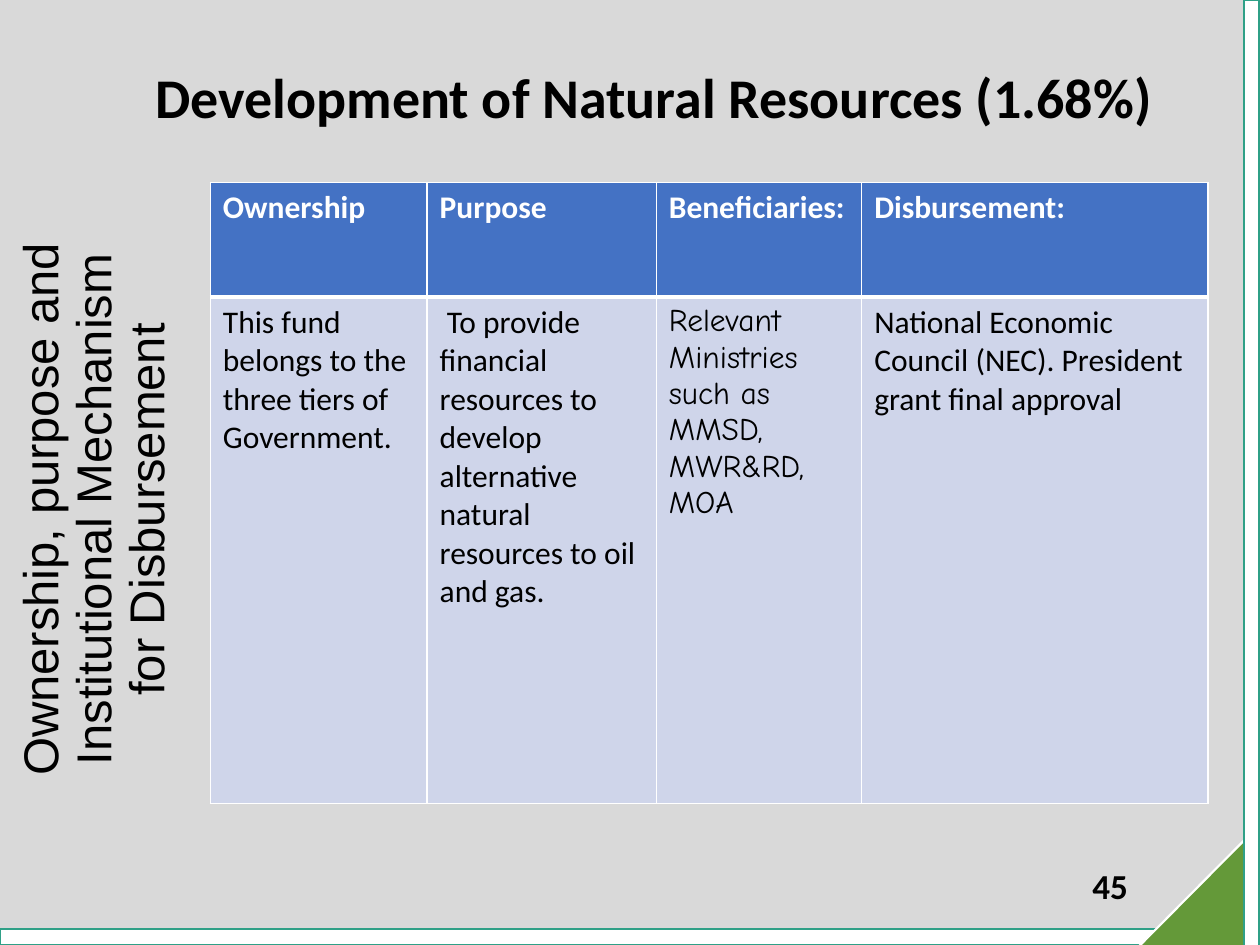
"""Build the slide on the development of natural resources fund."""
from lxml import etree
from pptx import Presentation
from pptx import util as u
from pptx.dml.color import RGBColor
from pptx.enum import shapes, text
from pptx.oxml.ns import qn

COLORS = {"back": "D9D9D9", "white": "FFFFFF", "black": "000000", "teal": "2FA087",
          "green": "649939", "header": "4472C4", "body": "CFD5EA"}


class Deck:
    """Holds the style and the current slide."""

    def __init__(self):
        self.prs = Presentation()
        self.prs.slide_width, self.prs.slide_height = u.Cm(25.4), u.Cm(19.05)
        self.s = self.prs.slides.add_slide(self.prs.slide_layouts[5])
        self.paint(self.s.background.fill, "back")

    def paint(self, fill, color):
        fill.solid()
        fill.fore_color.rgb = RGBColor.from_string(COLORS[color])

    def set_text(self, tf, words, size, color="black", bold=False, font="Calibri", align=None):
        tf.word_wrap = True
        p = tf.paragraphs[0]
        p.text, p.alignment = words, align
        p.font.size, p.font.bold, p.font.name = u.Pt(size), bold, font
        p.font.color.rgb = RGBColor.from_string(COLORS[color])
        return p

    def shape(self, kind, box, fill, line, rotation=0):
        sp = self.s.shapes.add_shape(kind, *map(u.Cm, box))
        sp.rotation = rotation
        sp.shadow.inherit = False
        self.paint(sp.fill, fill)
        self.paint(sp.line.fill, line)
        sp.line.width = u.Pt(1.25)

    def title(self, words, box):
        sp = self.s.shapes.title
        sp.left, sp.top, sp.width, sp.height = map(u.Cm, box)
        sp.text_frame.vertical_anchor = text.MSO_ANCHOR.MIDDLE
        self.set_text(sp.text_frame, words, 32, bold=True, align=text.PP_ALIGN.CENTER)

    def number(self, words, box):
        tf = self.s.shapes.add_textbox(*map(u.Cm, box)).text_frame
        tf.vertical_anchor = text.MSO_ANCHOR.MIDDLE
        self.set_text(tf, words, 20, bold=True, align=text.PP_ALIGN.RIGHT)

    def side_heading(self, words, box):
        tf = self.s.shapes.add_textbox(*map(u.Cm, box)).text_frame
        p = self.set_text(tf, words, 28, font="Arial", align=text.PP_ALIGN.CENTER)
        p.line_spacing = 0.9
        tf._txBody.bodyPr.set("vert", "vert270")

    def border(self, cell, side, points):
        ln = etree.SubElement(cell._tc.get_or_add_tcPr(), qn(f"a:ln{side}"), w=str(u.Pt(points)))
        fill = etree.SubElement(ln, qn("a:solidFill"))
        etree.SubElement(fill, qn("a:srgbClr"), val=COLORS["white"])

    def table(self, rows, box, widths, heights):
        tbl = self.s.shapes.add_table(len(rows), len(widths), *map(u.Cm, box)).table
        for col, width in zip(tbl.columns, widths):
            col.width = u.Cm(width)
        for i, (row, height) in enumerate(zip(rows, heights)):
            tbl.rows[i].height = u.Cm(height)
            head = i == 0
            for j, (words, font) in enumerate(row):
                cell = tbl.cell(i, j)
                for side, points in zip("LRTB", (1, 1, 1, 3) if head else (1, 1, 3, 1)):
                    self.border(cell, side, points)
                self.paint(cell.fill, "header" if head else "body")
                self.set_text(cell.text_frame, words, 18, "white" if head else "black", head, font)


def main():
    deck = Deck()
    kinds = shapes.MSO_SHAPE
    deck.shape(kinds.RECTANGLE, (0, 18.73, 25.4, 0.32), "white", "teal")
    deck.shape(kinds.RIGHT_TRIANGLE, (22.56, 16.84, 2.64, 2.62), "green", "white", 270)
    deck.shape(kinds.RECTANGLE, (15.39, 9.68, 19.69, 0.31), "white", "teal", 270)
    deck.number("45", (21.39, 17.35, 1.6, 1.02))
    deck.title("Development of Natural Resources (1.68%)", (2.54, 0.97, 21.29, 1.93))
    headings = ("Ownership", "Purpose", "Beneficiaries:", "Disbursement:")
    details = (
        ("This fund belongs to the three tiers of Government.", "Calibri"),
        (" To provide financial resources to develop alternative natural resources "
         "to oil and gas.", "Calibri"),
        ("Relevant Ministries such as MMSD, MWR&RD, MOA", "Comic Neue"),
        ("National Economic Council (NEC). President grant final approval", "Calibri"),
    )
    deck.table([[(h, "Calibri") for h in headings], details], (4.24, 3.68, 20.11, 12.52),
               (4.37, 4.62, 4.14, 6.98), (2.31, 10.21))
    deck.side_heading("Ownership, purpose and Institutional Mechanism for Disbursement",
                      (0.2, 4.34, 4.11, 11.86))
    deck.prs.save("out.pptx")


if __name__ == "__main__":
    main()
